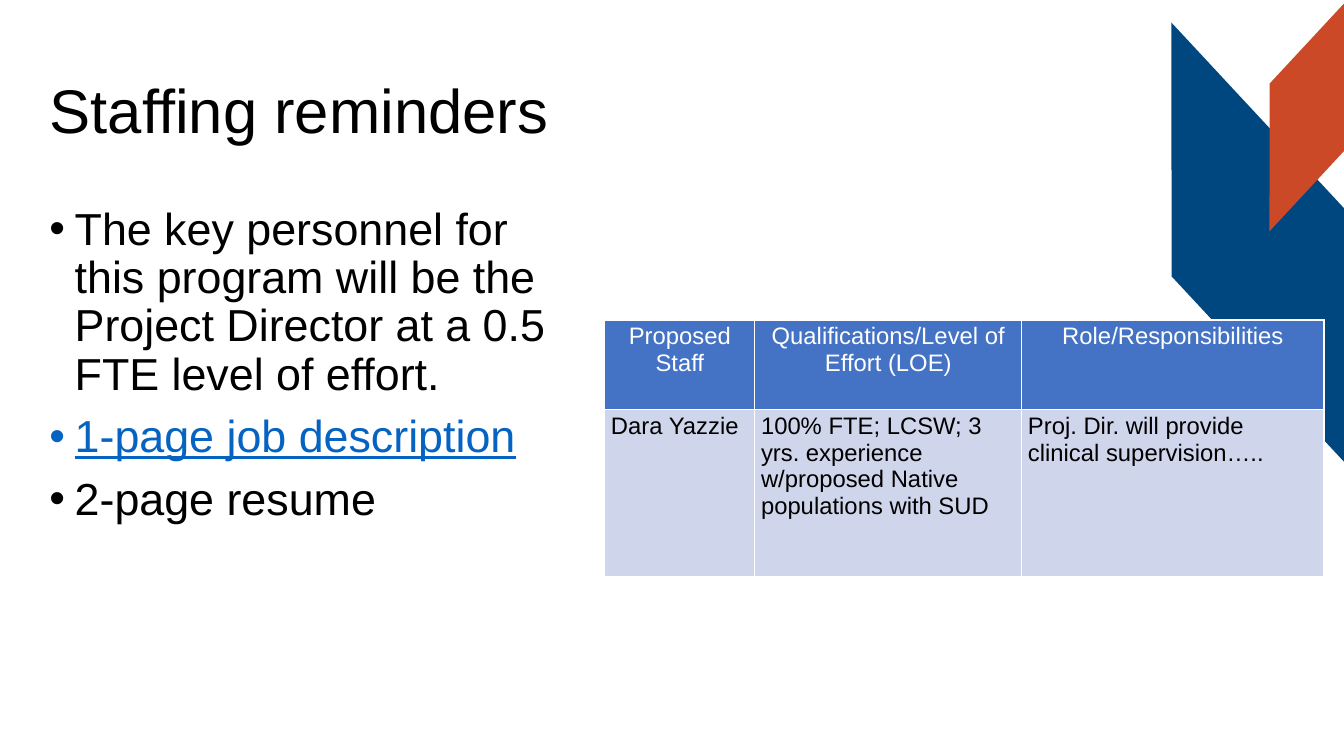
import pptx
import pptx.dml.color
import pptx.enum.shapes
import pptx.enum.text
import pptx.oxml
import pptx.oxml.ns
import pptx.util
from lxml import etree

Pt = pptx.util.Pt
RGBColor = pptx.dml.color.RGBColor
PP_ALIGN = pptx.enum.text.PP_ALIGN
MSO_ANCHOR = pptx.enum.text.MSO_ANCHOR

BLACK = RGBColor(0x00, 0x00, 0x00)
WHITE = RGBColor(0xFF, 0xFF, 0xFF)
NAVY = RGBColor(0x00, 0x46, 0x7F)
ORANGE = RGBColor(0xCC, 0x49, 0x27)
LINK_BLUE = RGBColor(0x05, 0x63, 0xC1)
HEADER_BLUE = RGBColor(0x44, 0x72, 0xC4)
ROW_BLUE = RGBColor(0xCF, 0xD5, 0xEA)

FONT = "Arial"
TITLE = "Staffing reminders"
REMINDERS = [
    ("The key personnel for this program will be the Project Director "
     "at a 0.5 FTE level of effort.", False),
    ("1-page job description", True),
    ("2-page resume", False),
]
STAFF_ROWS = [
    ["Proposed Staff", "Qualifications/Level of Effort (LOE)", "Role/Responsibilities"],
    ["Dara Yazzie",
     "100% FTE; LCSW; 3 yrs. experience w/proposed Native populations with SUD",
     "Proj. Dir. will provide clinical supervision….."],
]
COLUMN_SHARES = [1.49, 2.65, 3]
ROW_SHARES = [0.89, 1.66]


def set_font(paragraph, size, color):
    paragraph.font.name = FONT
    paragraph.font.size = Pt(size)
    paragraph.font.bold = False
    paragraph.font.color.rgb = color


def add_ribbon(slide, box, rotation, color):
    """Tilted diamond whose short sides stand upright."""
    shape = slide.shapes.add_shape(
        pptx.enum.shapes.MSO_SHAPE.DIAMOND, *map(Pt, box))
    shape.rotation = rotation
    shape.shadow.inherit = False
    shape.fill.solid()
    shape.fill.fore_color.rgb = color
    shape.line.fill.background()


def place_title(slide, box):
    title = slide.shapes.title
    title.left, title.top, title.width, title.height = map(Pt, box)
    frame = title.text_frame
    frame.text = TITLE
    frame.auto_size = pptx.enum.text.MSO_AUTO_SIZE.NONE
    frame.vertical_anchor = MSO_ANCHOR.MIDDLE
    paragraph = frame.paragraphs[0]
    paragraph.alignment = PP_ALIGN.LEFT
    paragraph.line_spacing = 0.9
    set_font(paragraph, 44, BLACK)


def add_bullet(paragraph, indent):
    properties = paragraph._p.get_or_add_pPr()
    properties.set("marL", str(Pt(indent)))
    properties.set("indent", str(-Pt(indent)))
    bullet_font = etree.SubElement(properties, pptx.oxml.ns.qn("a:buFont"))
    bullet_font.set("typeface", FONT)
    bullet = etree.SubElement(properties, pptx.oxml.ns.qn("a:buChar"))
    bullet.set("char", "•")


def add_reminders(slide, box):
    frame = slide.shapes.add_textbox(*map(Pt, box)).text_frame
    frame.word_wrap = True
    for index, (text, linked) in enumerate(REMINDERS):
        color = LINK_BLUE if linked else BLACK
        paragraph = frame.add_paragraph() if index else frame.paragraphs[0]
        paragraph.text = text
        paragraph.line_spacing = 0.9
        paragraph.space_before = Pt(10)
        add_bullet(paragraph, 18)
        set_font(paragraph, 32, color)
        # Underline and its color sit on the run so that they always show
        paragraph.runs[0].font.underline = linked
        paragraph.runs[0].font.color.rgb = color


def add_borders(cell, color, width):
    properties = cell._tc.get_or_add_tcPr()
    for position, side in enumerate(("lnL", "lnR", "lnT", "lnB")):
        properties.insert(position, pptx.oxml.parse_xml(
            f'<a:{side} {pptx.oxml.ns.nsdecls("a")} w="{Pt(width)}"><a:solidFill>'
            f'<a:srgbClr val="{color}"/></a:solidFill></a:{side}>'))


def add_staff_table(slide, box):
    left, top, width, height = box
    table = slide.shapes.add_table(
        len(STAFF_ROWS), len(COLUMN_SHARES), *map(Pt, box)).table
    for column, share in zip(table.columns, COLUMN_SHARES):
        column.width = Pt(width * share / sum(COLUMN_SHARES))
    for row, share in zip(table.rows, ROW_SHARES):
        row.height = Pt(height * share / sum(ROW_SHARES))
    for row_index, texts in enumerate(STAFF_ROWS):
        header = row_index == 0
        for column_index, text in enumerate(texts):
            cell = table.cell(row_index, column_index)
            cell.text = text
            cell.margin_left = cell.margin_right = Pt(4.4)
            cell.margin_top = cell.margin_bottom = Pt(2.2)
            cell.fill.solid()
            cell.fill.fore_color.rgb = HEADER_BLUE if header else ROW_BLUE
            add_borders(cell, WHITE, 1)
            paragraph = cell.text_frame.paragraphs[0]
            paragraph.alignment = PP_ALIGN.CENTER if header else PP_ALIGN.LEFT
            set_font(paragraph, 17, WHITE if header else BLACK)


def build_staffing_slide(presentation):
    slide = presentation.slides.add_slide(presentation.slide_layouts[5])
    # Corner ribbons
    add_ribbon(slide, (832.3, 4.3, 132.5, 337.7), 338.5, NAVY)
    add_ribbon(slide, (904.3, -24.5, 77, 196.6), 21.5, ORANGE)
    # Title and reminders
    place_title(slide, (28.3, 28.8, 865.4, 104.4))
    add_reminders(slide, (28.3, 143.9, 383.8, 375))
    # Staff table
    add_staff_table(slide, (432, 228.6, 513.8, 183.4))


def main():
    presentation = pptx.Presentation()
    presentation.slide_width = Pt(960)
    presentation.slide_height = Pt(540)
    build_staffing_slide(presentation)
    presentation.save("out.pptx")


if __name__ == "__main__":
    main()
